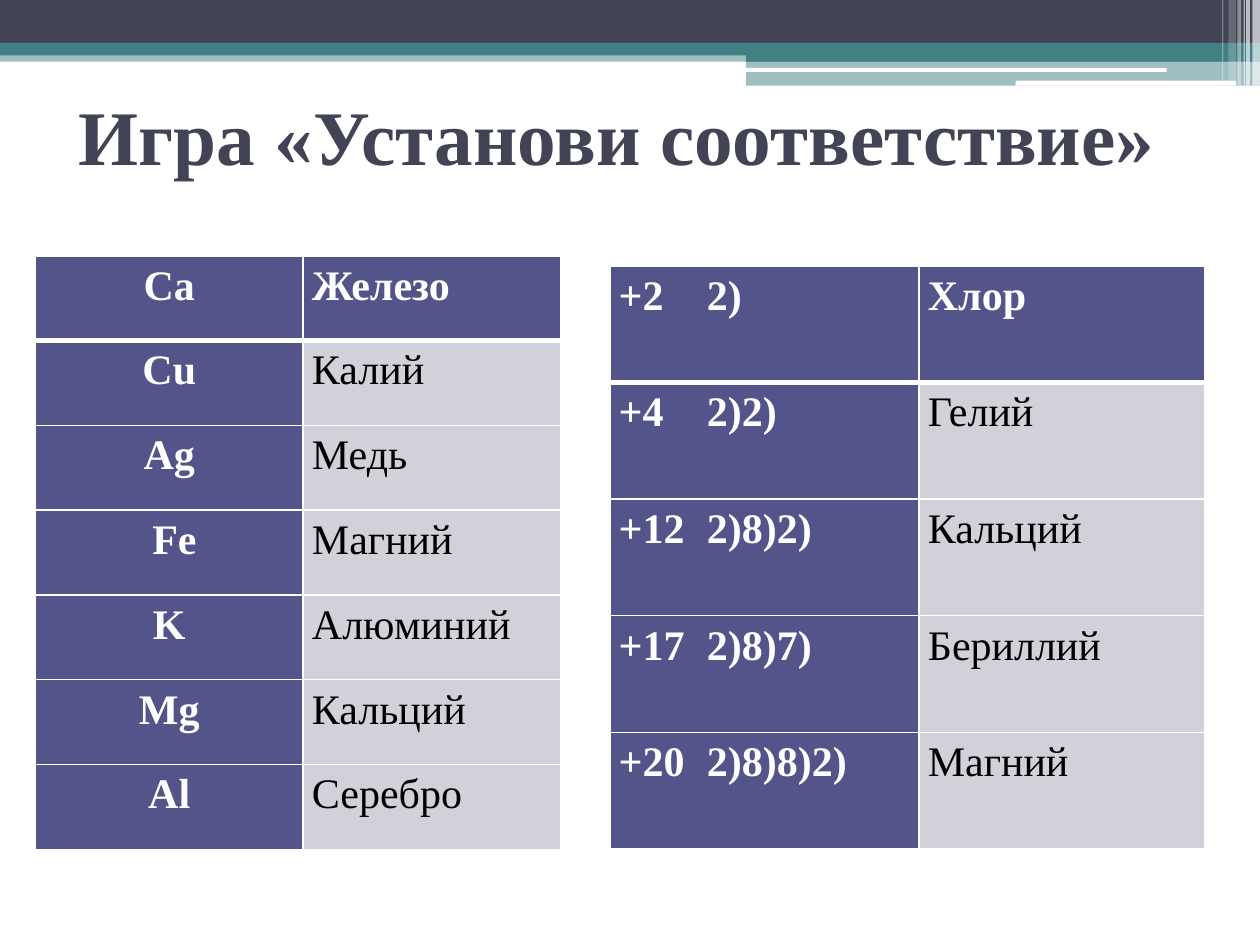
"""Build a matching game slide on chemical elements."""
from dataclasses import dataclass

from lxml import etree
from pptx import Presentation, util as u
from pptx.dml.color import RGBColor
from pptx.enum import shapes, text
from pptx.oxml import ns


@dataclass(frozen=True)
class Theme:
    """Colours, font and type sizes of the slide."""
    dark: str = "424456"
    teal: str = "438086"
    head: str = "53548A"
    body: str = "D1D1DA"
    white: str = "FFFFFF"
    black: str = "000000"
    font: str = "Times New Roman"
    title: float = 44.1
    cell: float = 24


THEME = Theme()
WIDE, HIGH = u.Inches(10), u.Inches(7.5)
RECT = shapes.MSO_SHAPE.RECTANGLE
ROUND = shapes.MSO_SHAPE.ROUNDED_RECTANGLE

BANDS = [
    (0, 5.33, 100, 1.2, THEME.teal, 50),
    (0, 0, 100, 4.53, THEME.dark, 100),
    (0, 4.53, 100, 1.33, THEME.teal, 100),
    (59.2, 5.2, 40.8, 1.33, THEME.teal, 100),
    (59.2, 6.4, 40.8, 2.67, THEME.teal, 50),
]
PILLS = [(59.1, 7.2, 33.5, 0.4), (80.6, 8.53, 17.5, 0.53)]
STRIPES = [
    (99.4, 0.6, 9.07, 65), (98.9, 0.3, 9.07, 65), (98.7, 0.1, 9.07, 60),
    (98.2, 0.3, 9.07, 40), (97.5, 0.6, 8.53, 20), (97, 0.1, 8.53, 30),
]
SIGNS = [
    ("Ca", "Железо"), ("Cu", "Калий"), ("Ag", "Медь"), (" Fe", "Магний"),
    ("K", "Алюминий"), ("Mg", "Кальций"), ("Al", "Серебро"),
]
SHELLS = [
    ("+2\t2)", "Хлор"), ("+4\t2)2)", "Гелий"), ("+12\t2)8)2)", "Кальций"),
    ("+17\t2)8)7)", "Бериллий"), ("+20\t2)8)8)2)", "Магний"),
]


def rgb(code):
    """Turn a hex code into a colour."""
    return RGBColor.from_string(code)


def place(left, top, wide, high):
    """Turn percentages of the slide into lengths."""
    return [int(part * side / 100) for part, side in
            zip((left, top, wide, high), (WIDE, HIGH, WIDE, HIGH))]


def add(parent, tag, **attrs):
    """Append a drawing element to a parent."""
    node = etree.SubElement(parent, ns.qn(tag))
    for name, value in attrs.items():
        node.set(name, str(value))
    return node


def style(para, size, color, bold):
    """Set the font of a paragraph."""
    font = para.font
    font.name, font.size, font.bold = THEME.font, u.Pt(size), bold
    font.color.rgb = rgb(color)


def bar(slide, box, color, alpha=100, kind=RECT):
    """Draw a plain bar, with its opacity in percent."""
    shape = slide.shapes.add_shape(kind, *place(*box))
    shape.shadow.inherit = False
    shape.line.fill.background()
    shape.fill.solid()
    shape.fill.fore_color.rgb = rgb(color)
    if alpha < 100:
        tint = shape.element.spPr.find(ns.qn("a:solidFill"))[0]
        add(tint, "a:alpha", val=alpha * 1000)


def banner(slide):
    """Draw the bands, pills and stripes along the top."""
    for *box, color, alpha in BANDS:
        bar(slide, box, color, alpha)
    for box in PILLS:
        bar(slide, box, THEME.white, kind=ROUND)
    for left, wide, high, alpha in STRIPES:
        bar(slide, (left, 0, wide, high), THEME.white, alpha)


def title(slide, words):
    """Write the slide title."""
    frame = slide.shapes.add_textbox(*place(5, 9.33, 90, 15.6)).text_frame
    frame.word_wrap = True
    frame.vertical_anchor = text.MSO_ANCHOR.TOP
    frame.margin_left = frame.margin_top = frame.margin_bottom = 0
    frame.margin_right = u.Inches(0.2)
    para = frame.paragraphs[0]
    para.text = words
    para.alignment = text.PP_ALIGN.CENTER
    style(para, THEME.title, THEME.dark, True)


def edge(cell, base):
    """Give a cell white borders, with the bottom one in points."""
    props = cell._tc.get_or_add_tcPr()
    for side, width in zip("LRTB", (1, 1, 1, base)):
        line = add(props, f"a:ln{side}", w=u.Pt(width))
        add(add(line, "a:solidFill"), "a:srgbClr", val=THEME.white)


def fill(cell, words, strong, base, align):
    """Write, colour and frame one cell."""
    edge(cell, base)
    cell.fill.solid()
    cell.fill.fore_color.rgb = rgb(THEME.head if strong else THEME.body)
    cell.margin_left = cell.margin_right = u.Inches(0.07)
    cell.margin_top = cell.margin_bottom = 0
    para = cell.text_frame.paragraphs[0]
    para.text = words
    para.alignment = align
    para.line_spacing = 1.15
    style(para, THEME.cell, THEME.white if strong else THEME.black, strong)
    if "\t" in words:
        props = para._p.get_or_add_pPr()
        stops = etree.Element(ns.qn("a:tabLst"))
        add(stops, "a:tab", pos=u.Inches(0.7), algn="l")
        props.find(ns.qn("a:lnSpc")).addnext(stops)


def grid(slide, box, rows, split, align):
    """Add a table of pairs, its first column a share of the width."""
    left, top, wide, high = place(*box)
    table = slide.shapes.add_table(len(rows), 2, left, top, wide, high).table
    table.horz_banding = False
    table.columns[0].width = int(wide * split)
    table.columns[1].width = wide - int(wide * split)
    for row, pair in enumerate(rows):
        base = 1 if row else 3
        for col, words in enumerate(pair):
            side = text.PP_ALIGN.LEFT if col else align
            fill(table.cell(row, col), words, not (row and col), base, side)


def main():
    """Build and save the slide."""
    deck = Presentation()
    deck.slide_width, deck.slide_height = WIDE, HIGH
    slide = deck.slides.add_slide(deck.slide_layouts[6])
    banner(slide)
    title(slide, "Игра «Установи соответствие»")
    grid(slide, (2.8, 27.07, 41.7, 62.8), SIGNS, 0.51, text.PP_ALIGN.CENTER)
    grid(slide, (48.4, 28.13, 47.2, 61.73), SHELLS, 0.52, text.PP_ALIGN.LEFT)
    deck.save("out.pptx")


if __name__ == "__main__":
    main()
